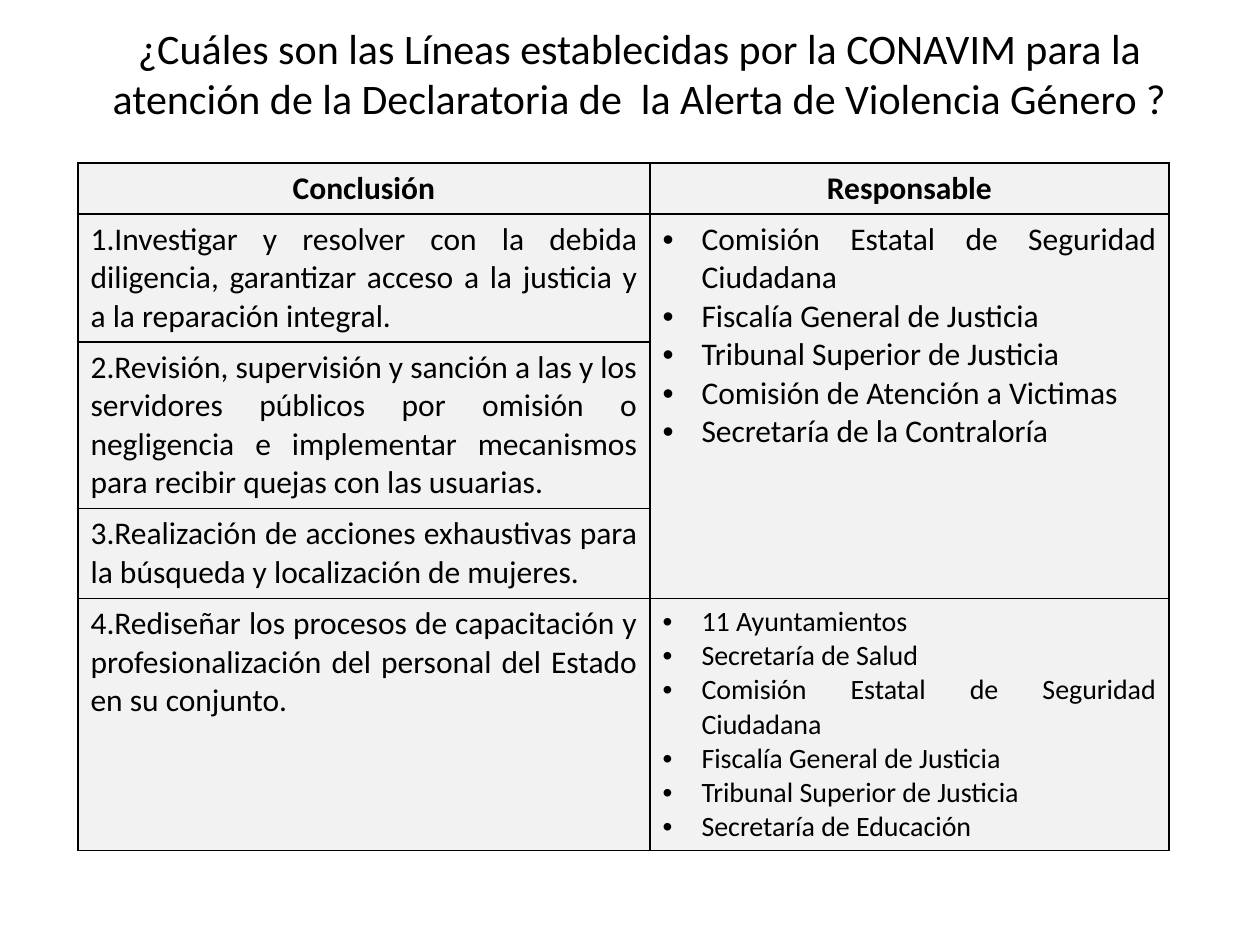
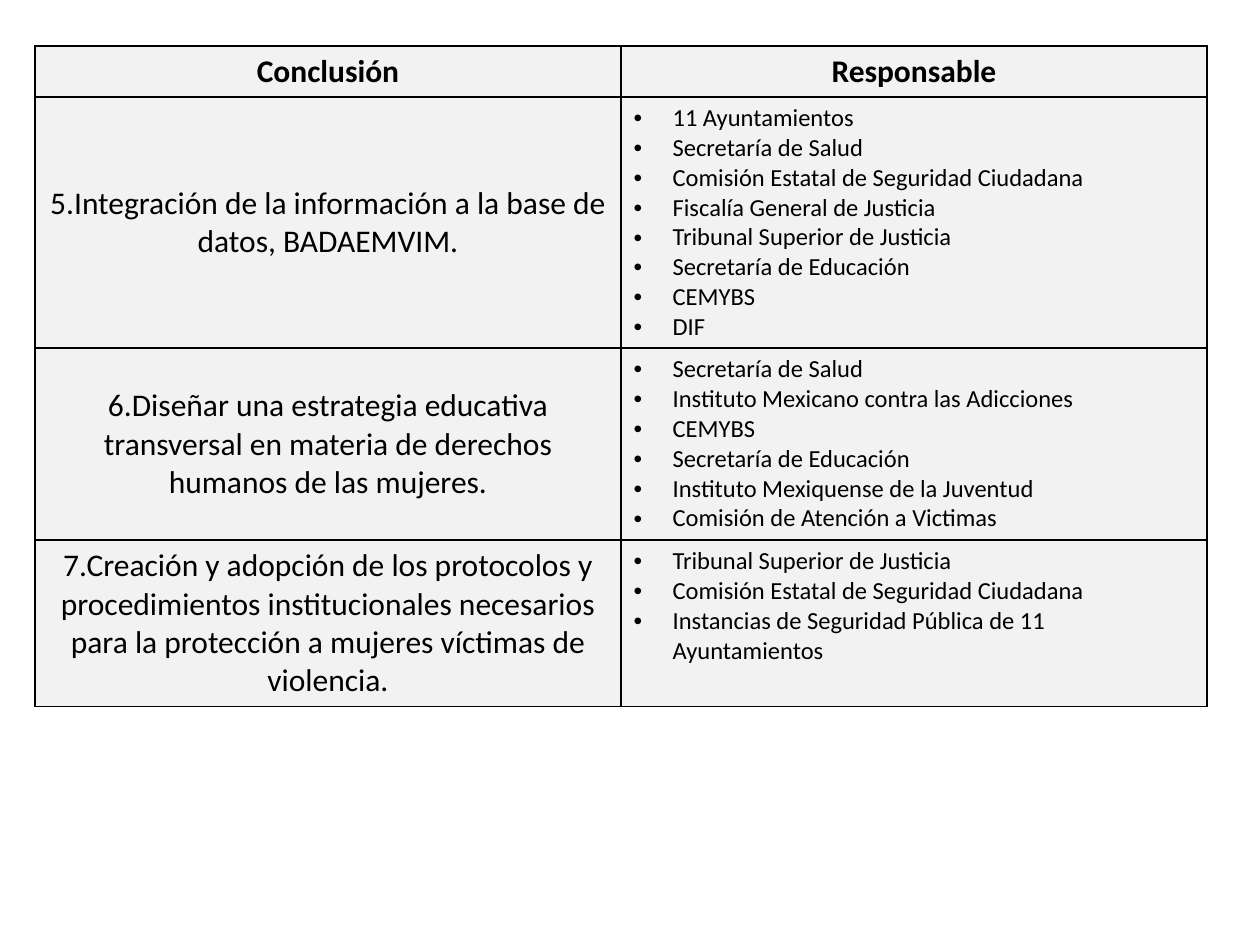
from dataclasses import dataclass

from lxml import etree
from pptx import Presentation
from pptx.dml.color import RGBColor
from pptx.enum.text import MSO_ANCHOR, PP_ALIGN
from pptx.oxml.ns import qn
from pptx.slide import Slide
from pptx.table import _Cell
from pptx.text.text import _Paragraph
from pptx.util import Emu, Pt

CENTER, JUSTIFY, LEFT = PP_ALIGN.CENTER, PP_ALIGN.JUSTIFY, PP_ALIGN.LEFT
TOP, MIDDLE = MSO_ANCHOR.TOP, MSO_ANCHOR.MIDDLE

BLACK = RGBColor(0x00, 0x00, 0x00)
CELL_GRAY = RGBColor(0xF2, 0xF2, 0xF2)
FONT = "Calibri"
PX_PER_INCH = 126
TITLE_ONLY, BLANK = 5, 6
TITLE_SIZE, BODY_SIZE = 24, 18
HEADER_HEIGHT = 51
BULLET_INDENT = 39
HEADINGS = ("Conclusión", "Responsable")

AYUNTAMIENTOS = "11 Ayuntamientos"
SALUD = "Secretaría de Salud"
SEGURIDAD = "Comisión Estatal de Seguridad Ciudadana"
FISCALIA = "Fiscalía General de Justicia"
TRIBUNAL = "Tribunal Superior de Justicia"
VICTIMAS = "Comisión de Atención a Victimas"
EDUCACION = "Secretaría de Educación"
CEMYBS = "CEMYBS"


@dataclass(frozen=True)
class Line:
    """A conclusion and its responsible bodies; none means they are shared with the line above."""
    conclusion: str
    height: int
    responsible: tuple[str, ...] = ()
    bullet_size: int = BODY_SIZE


@dataclass(frozen=True)
class LineTable:
    left: int
    top: int
    column_widths: tuple[int, int]
    conclusion_alignment: PP_ALIGN
    conclusion_anchor: MSO_ANCHOR
    bullet_alignment: PP_ALIGN
    lines: tuple[Line, ...]


TITLE = ("¿Cuáles son las Líneas establecidas por la CONAVIM para la atención "
         "de la Declaratoria de  la Alerta de Violencia Género ?")

FIRST_TABLE = LineTable(78, 163, (572, 519), JUSTIFY, TOP, JUSTIFY, (
    Line("1.Investigar y resolver con la debida diligencia, garantizar acceso a la "
         "justicia y a la reparación integral.", 128,
         (SEGURIDAD, FISCALIA, TRIBUNAL, VICTIMAS, "Secretaría de la Contraloría")),
    Line("2.Revisión, supervisión y sanción a las y los servidores públicos por omisión o "
         "negligencia e implementar mecanismos para recibir quejas con las usuarias.", 166),
    Line("3.Realización de acciones exhaustivas para la búsqueda y localización de mujeres.", 90),
    Line("4.Rediseñar los procesos de capacitación y profesionalización del personal del "
         "Estado en su conjunto.", 252,
         (AYUNTAMIENTOS, SALUD, SEGURIDAD, FISCALIA, TRIBUNAL, EDUCACION), 16),
))

SECOND_TABLE = LineTable(35, 46, (586, 586), CENTER, MIDDLE, LEFT, (
    Line("5.Integración de la información a la base de datos, BADAEMVIM.", 251,
         (AYUNTAMIENTOS, SALUD, SEGURIDAD, FISCALIA, TRIBUNAL, EDUCACION, CEMYBS, "DIF"), 14),
    Line("6.Diseñar una estrategia educativa transversal en materia de derechos humanos "
         "de las mujeres.", 192,
         (SALUD, "Instituto Mexicano contra las Adicciones", CEMYBS, EDUCACION,
          "Instituto Mexiquense de la Juventud", VICTIMAS), 14),
    Line("7.Creación y adopción de los protocolos y procedimientos institucionales "
         "necesarios para la protección a mujeres víctimas de violencia.", 166,
         (TRIBUNAL, SEGURIDAD, "Instancias de Seguridad Pública de 11 Ayuntamientos"), 14),
))


def px(length: int) -> Emu:
    return Emu(round(length * 914400 / PX_PER_INCH))


def format_paragraph(paragraph: _Paragraph, size: int, alignment: PP_ALIGN,
                     bold: bool = False) -> None:
    paragraph.alignment = alignment
    font = paragraph.font
    font.name, font.size, font.bold = FONT, Pt(size), bold
    font.color.rgb = BLACK


def add_bullet(paragraph: _Paragraph) -> None:
    properties = paragraph._p.get_or_add_pPr()
    properties.set("marL", str(px(BULLET_INDENT)))
    properties.set("indent", str(-px(BULLET_INDENT)))
    etree.SubElement(properties, qn("a:buFont"), typeface="Arial")
    etree.SubElement(properties, qn("a:buChar"), char="•")


def style_cell(cell: _Cell) -> None:
    """Give the cell its gray fill and thin black borders."""
    cell.fill.solid()
    cell.fill.fore_color.rgb = CELL_GRAY
    properties = cell._tc.get_or_add_tcPr()
    for position, side in enumerate(("lnL", "lnR", "lnT", "lnB")):
        border = etree.Element(qn(f"a:{side}"), w=str(Pt(1)))
        fill = etree.SubElement(border, qn("a:solidFill"))
        etree.SubElement(fill, qn("a:srgbClr"), val=str(BLACK))
        properties.insert(position, border)


def write_cell(cell: _Cell, texts: tuple[str, ...], size: int, alignment: PP_ALIGN,
               bold: bool = False, bullets: bool = False) -> None:
    cell.text = "\n".join(texts)
    for paragraph in cell.text_frame.paragraphs:
        if bullets:
            add_bullet(paragraph)
        format_paragraph(paragraph, size, alignment, bold)


def add_line_table(slide: Slide, content: LineTable) -> None:
    heights = [HEADER_HEIGHT] + [line.height for line in content.lines]
    table = slide.shapes.add_table(
        len(heights), len(HEADINGS), px(content.left), px(content.top),
        px(sum(content.column_widths)), px(sum(heights))).table
    table.first_row = table.horz_banding = False
    for column, width in zip(table.columns, content.column_widths):
        column.width = px(width)
    for row, height in zip(table.rows, heights):
        row.height = px(height)
    for cell in table.iter_cells():
        style_cell(cell)

    for column_index, heading in enumerate(HEADINGS):
        write_cell(table.cell(0, column_index), (heading,), BODY_SIZE, CENTER, bold=True)

    group_start = 1
    for row_index, line in enumerate(content.lines, start=1):
        conclusion = table.cell(row_index, 0)
        write_cell(conclusion, (line.conclusion,), BODY_SIZE, content.conclusion_alignment)
        conclusion.vertical_anchor = content.conclusion_anchor
        if line.responsible:
            group_start = row_index
            write_cell(table.cell(row_index, 1), line.responsible, line.bullet_size,
                       content.bullet_alignment, bullets=True)
        following = content.lines[row_index:row_index + 1]
        group_ends = not following or following[0].responsible
        if group_ends and row_index > group_start:
            table.cell(group_start, 1).merge(table.cell(row_index, 1))


def set_title(slide: Slide, text: str) -> None:
    title = slide.shapes.title
    title.left, title.top, title.width, title.height = map(px, (84, 16, 1111, 129))
    frame = title.text_frame
    frame.text = text
    frame.word_wrap = True
    frame.vertical_anchor = TOP
    format_paragraph(frame.paragraphs[0], TITLE_SIZE, CENTER)


def main() -> None:
    presentation = Presentation()
    presentation.slide_width, presentation.slide_height = px(1260), px(945)
    layouts = presentation.slide_layouts

    first_slide = presentation.slides.add_slide(layouts[TITLE_ONLY])
    add_line_table(first_slide, FIRST_TABLE)
    set_title(first_slide, TITLE)

    second_slide = presentation.slides.add_slide(layouts[BLANK])
    add_line_table(second_slide, SECOND_TABLE)

    presentation.save("out.pptx")


if __name__ == "__main__":
    main()
